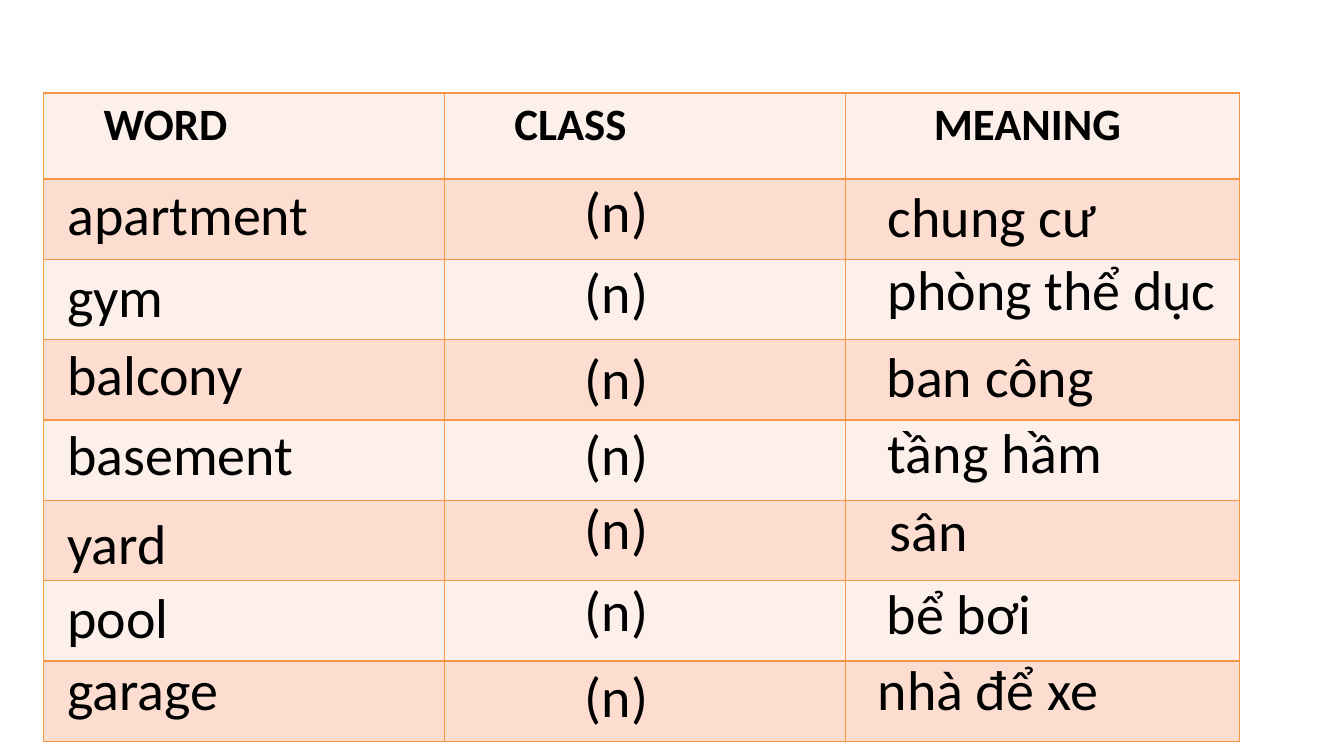
import pptx
import pptx.dml.color
import pptx.enum.text
import pptx.oxml
import pptx.oxml.ns
import pptx.util

Pt = pptx.util.Pt
COLORS = {"text": "000000", "light": "FDEFE9", "dark": "FCDDCF", "border": "F79646"}
HEADERS = [("WORD", 43), ("CLASS", 50), ("MEANING", 63)]
COLUMN_WIDTHS = [286.5, 286.5, 281.5]
ROW_HEIGHTS = [61.5] + [57.4] * 7
WORDS = [
    ("apartment", 124.6), ("gym", 183.6), ("balcony", 239), ("basement", 295.9),
    ("yard", 360), ("pool", 412.6), ("garage", 463.7),
]
CLASS_TOPS = [122.4, 180.7, 241.9, 295.9, 349.2, 407.5, 468.7]
MEANINGS = [
    ("chung cư", 627.1, 126), ("phòng thể dục", 627.1, 178.6),
    ("ban công", 626.4, 240.5), ("tầng hầm", 627.1, 294.5),
    ("sân", 628.6, 350.6), ("bể bơi", 626.4, 409.7), ("nhà để xe", 619.9, 463.7),
]


class VocabularySlide:
    """Holds the style and the current slide, and adds its elements."""

    font_name = "Calibri"
    header_size = 32
    word_size = 40

    def __init__(self, presentation):
        self.slide = presentation.slides.add_slide(presentation.slide_layouts[6])

    def color(self, name):
        return pptx.dml.color.RGBColor.from_string(COLORS[name])

    def format_paragraph(self, paragraph, size, bold=False):
        paragraph.font.name = self.font_name
        paragraph.font.size = Pt(size)
        paragraph.font.bold = bold
        paragraph.font.color.rgb = self.color("text")

    def border(self, cell):
        properties = cell._tc.get_or_add_tcPr()
        for position, side in enumerate(("lnL", "lnR", "lnT", "lnB")):
            line = pptx.oxml.parse_xml(
                f'<a:{side} {pptx.oxml.ns.nsdecls("a")} w="{Pt(1)}"><a:solidFill>'
                f'<a:srgbClr val="{COLORS["border"]}"/></a:solidFill></a:{side}>'
            )
            properties.insert(position, line)

    def table(self, left, top, headers, widths, heights):
        frame = self.slide.shapes.add_table(
            len(heights), len(widths), Pt(left), Pt(top), Pt(sum(widths)), Pt(sum(heights))
        )
        table = frame.table
        for column, width in zip(table.columns, widths):
            column.width = Pt(width)
        for index, (row, height) in enumerate(zip(table.rows, heights)):
            row.height = Pt(height)
            for cell in row.cells:
                cell.fill.solid()
                cell.fill.fore_color.rgb = self.color("dark" if index % 2 else "light")
                self.border(cell)
        for cell, (title, indent) in zip(table.rows[0].cells, headers):
            cell.margin_left = Pt(indent)
            cell.text = title
            self.format_paragraph(cell.text_frame.paragraphs[0], self.header_size, True)

    def text(self, text, left, top, width):
        shape = self.slide.shapes.add_textbox(Pt(left), Pt(top), Pt(width), Pt(55.4))
        frame = shape.text_frame
        frame.word_wrap = True
        frame.auto_size = pptx.enum.text.MSO_AUTO_SIZE.SHAPE_TO_FIT_TEXT
        frame.text = text
        self.format_paragraph(frame.paragraphs[0], self.word_size)


def main():
    presentation = pptx.Presentation()
    presentation.slide_width = Pt(960)
    presentation.slide_height = Pt(540)
    vocabulary = VocabularySlide(presentation)
    vocabulary.table(31, 66.4, HEADERS, COLUMN_WIDTHS, ROW_HEIGHTS)
    for word, top in WORDS:
        vocabulary.text(word, 41, top, 201)
    for top in CLASS_TOPS:
        vocabulary.text("(n)", 410.8, top, 97.5)
    for meaning, left, top in MEANINGS:
        vocabulary.text(meaning, left, top, 258.5)
    presentation.save("out.pptx")


if __name__ == "__main__":
    main()
